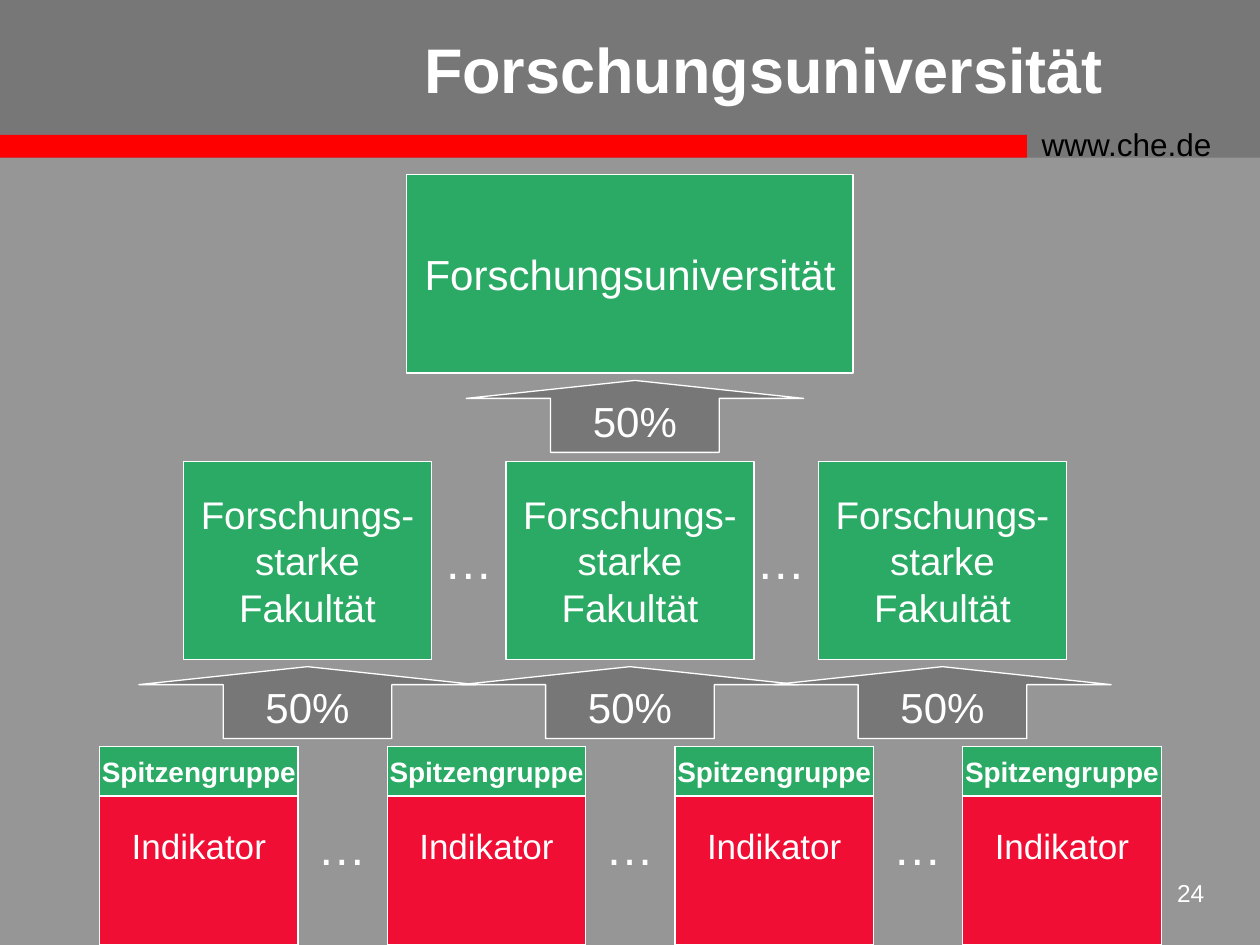
from dataclasses import dataclass

from pptx import Presentation
from pptx import util as u
from pptx.dml.color import RGBColor
from pptx.enum import shapes, text


@dataclass(frozen=True)
class Theme:
    font: str = "Arial"
    backdrop: str = "969696"
    gray: str = "777777"
    stripe: str = "FF0000"
    green: str = "2AAA64"
    red: str = "F00E34"
    white: str = "FFFFFF"
    black: str = "000000"
    title: int = 36
    dots: int = 28
    large: int = 24
    faculty: int = 22
    indicator: int = 20
    url: int = 18
    group: int = 16
    number: int = 14


class Deck:
    def __init__(self, theme, s):
        self.theme, self.s = theme, s
        self.paint(s.background.fill, theme.backdrop)

    def paint(self, fill, color):
        fill.solid()
        fill.fore_color.rgb = RGBColor.from_string(color)

    def set_text(self, sp, words, size, color=None, bold=False, wrap=True,
                 align=text.PP_ALIGN.CENTER, anchor=text.MSO_ANCHOR.MIDDLE):
        tf = sp.text_frame
        for name, value in {"word_wrap": wrap, "vertical_anchor": anchor}.items():
            setattr(tf, name, value)
        p = tf.paragraphs[0]
        p.alignment = align
        r = p.add_run()
        r.text = words
        style = {"name": self.theme.font, "size": u.Pt(size), "bold": bold}
        for name, value in style.items():
            setattr(r.font, name, value)
        r.font.color.rgb = RGBColor.from_string(color or self.theme.white)

    def shape(self, kind, box, color, outlined=True):
        sp = self.s.shapes.add_shape(kind, *map(u.Cm, box))
        sp.shadow.inherit = False
        self.paint(sp.fill, color)
        if outlined:
            sp.line.color.rgb = RGBColor.from_string(self.theme.white)
            sp.line.width = u.Pt(0.75)
        else:
            sp.line.fill.background()
        return sp

    def band(self, box, color):
        self.shape(shapes.MSO_SHAPE.RECTANGLE, box, color, outlined=False)

    def box(self, box, color, words, size, **style):
        sp = self.shape(shapes.MSO_SHAPE.RECTANGLE, box, color)
        self.set_text(sp, words, size, **style)

    def arrow(self, x, y):
        sp = self.shape(shapes.MSO_SHAPE.UP_ARROW, (x, y, 6.8, 1.45), self.theme.gray)
        sp.adjustments[0], sp.adjustments[1] = 0.5, 0.25
        self.set_text(sp, "50%", self.theme.large, wrap=False)

    def label(self, box, words, size, **style):
        sp = self.s.shapes.add_textbox(*map(u.Cm, box))
        self.set_text(sp, words, size, **style)

    def dots(self, x, y):
        self.label((x, y, 1.5, 1.45), "…", self.theme.dots, wrap=False,
                   align=text.PP_ALIGN.LEFT, anchor=text.MSO_ANCHOR.TOP)


def main():
    prs = Presentation()
    prs.slide_width, prs.slide_height = u.Cm(25.4), u.Cm(19.05)
    t = Theme()
    deck = Deck(t, prs.slides.add_slide(prs.slide_layouts[6]))

    # Header and page number
    deck.band((0, 0, 25.4, 3.18), t.gray)
    deck.band((0, 2.72, 20.7, 0.46), t.stripe)
    deck.label((20.75, 2.39, 4.45, 1.02), "www.che.de", t.url, color=t.black,
               align=text.PP_ALIGN.LEFT, anchor=text.MSO_ANCHOR.TOP)
    deck.label((23.06, 17.58, 1.47, 1.07), "24", t.number,
               align=text.PP_ALIGN.RIGHT, anchor=text.MSO_ANCHOR.TOP)
    deck.label((6.3, 0, 18.19, 2.74), "Forschungsuniversität", t.title, bold=True)

    # Indicators, each with its top group
    side = 4
    indicators = [2.01 + 5.8 * i for i in range(4)]
    for x in indicators:
        deck.box((x, 15.05, side, side), t.red, "Indikator", t.indicator, wrap=False)
        deck.box((x, 15.05, side, 1), t.green, "Spitzengruppe", t.group,
                 bold=True, wrap=False)
    for x in indicators[:-1]:
        deck.dots(x + side + 0.14, 16.33)

    # Faculties and university
    faculties = [3.7, 10.2, 16.5]
    for x in faculties:
        deck.box((x, 9.3, 5, side), t.green, "Forschungs-starke Fakultät", t.faculty)
    for x in faculties[1:]:
        deck.dots(x - 1.5, 10.57)
    deck.box((8.2, 3.52, 9, side), t.green, "Forschungsuniversität", t.large, wrap=False)

    # Arrows between the levels
    for x in faculties:
        deck.arrow(x - 0.9, 13.44)
    deck.arrow(9.4, 7.67)

    prs.save("out.pptx")


if __name__ == "__main__":
    main()
